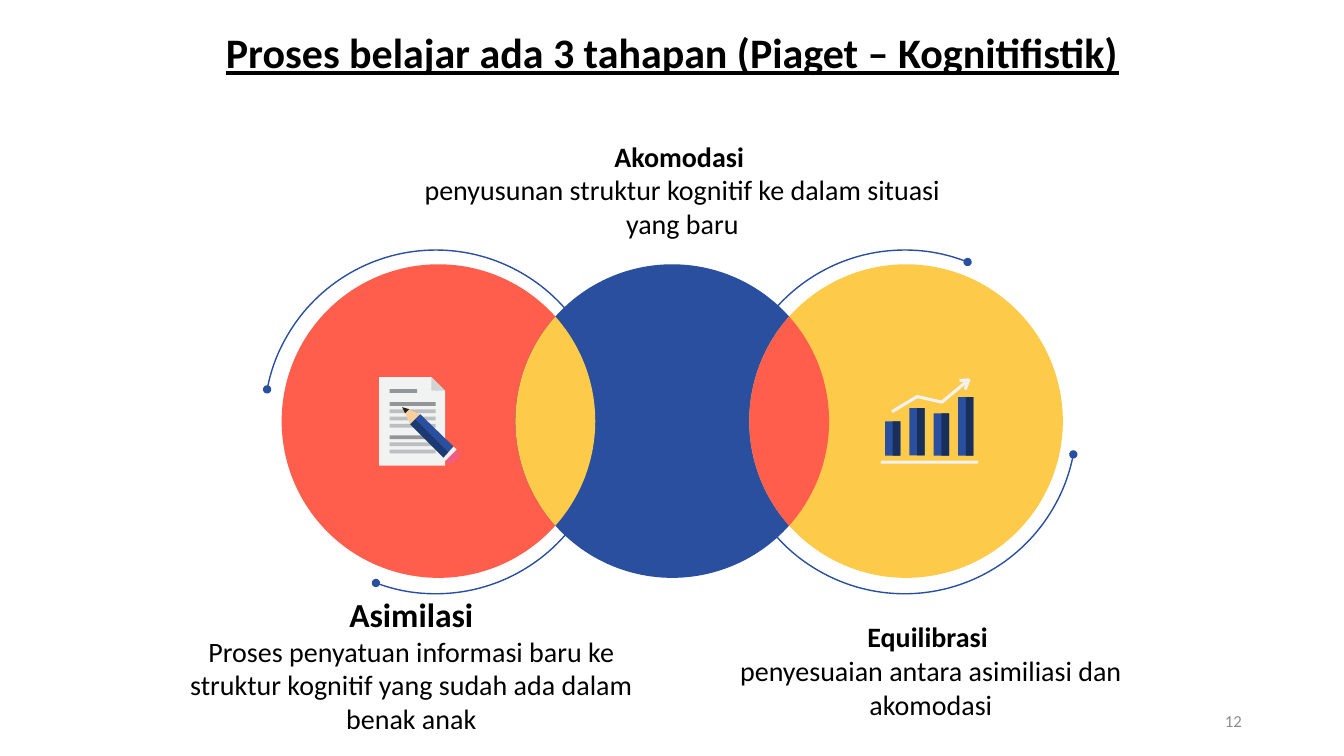
"""Build a slide on Piaget's three stages of learning."""
from math import acos, cos, sin

from pptx import Presentation
from pptx.dml.color import RGBColor
from pptx.enum import shapes, text
from pptx.oxml import parse_xml
from pptx.oxml.ns import nsdecls
from pptx.util import Pt

COLORS = {
    "black": "000000", "gray": "8C8C8C", "red": "FF5E4C", "blue": "294F9E",
    "yellow": "FECA4A", "navy": "182F5C", "paper": "F1F2F2", "fold": "D1D3D4",
    "dark_row": "939697", "light_row": "BCBEC0", "eraser": "F05D82",
    "wood": "F8D09C", "lead": "221F1F",
}
TITLE = "Proses belajar ada 3 tahapan (Piaget – Kognitifistik)"
STAGES = [
    ("Asimilasi", 24, "Proses penyatuan informasi baru ke struktur kognitif yang sudah ada dalam benak anak",
     (125.3, 424.1, 337, 101.5)),
    ("Equilibrasi ", 20, "penyesuaian antara asimiliasi dan akomodasi", (514.8, 442.8, 300.2, 72.7)),
    ("Akomodasi ", 20, "penyusunan struktur kognitif ke dalam situasi yang baru", (298.1, 99.4, 378.7, 72.7)),
]
CIRCLES = ["red", "blue", "yellow"]
LENSES = ["yellow", "red"]
FIRST_X, CENTER_Y, RADIUS, SPACING = 313.2, 300.8, 112, 167
ARC_TOP, ARC_SIZE = 178.6, 245.5
ARCS = [
    (188.6, 190.9, 0, ["headEnd"]),
    (523.4, 190.9, 291.5, ["headEnd", "tailEnd"]),
    (188.6, 10.9, 110.4, ["headEnd", "tailEnd"]),
    (523.4, 10.9, 142, ["headEnd", "tailEnd"]),
]
BAR_HEIGHTS = [24.4, 33.8, 30.2, 41.7]
BAR_LEFT, BAR_STEP, BAR_WIDTH, BAR_BOTTOM = 632.2, 17.4, 11, 325.4
TREND_LINES = [
    [(637.2, 294.1), (655.2, 283.3), (672.8, 287.3), (690.1, 272.9)],
    [(685.4, 271.8), (692, 271.4), (689.4, 278.3)],
]
PAGE = [
    ("paper", [(270.9, 269.3), (308.2, 269.3), (318, 279.1), (318, 332.6), (270.9, 332.6)]),
    ("fold", [(308.2, 269.3), (318, 279.1), (308.2, 279.1)]),
]
PAGE_ROWS = [
    (277.9, 19.6, "dark_row"), (287.3, 33, "dark_row"), (292.4, 33, "light_row"),
    (297.6, 33, "light_row"), (302.8, 33, "light_row"), (311, 33, "dark_row"),
    (316, 33, "light_row"), (321.2, 33, "light_row"),
]
PENCIL = [
    ("eraser", [(316.1, 326.2), (322.6, 319), (324, 319), (329, 325), (322.6, 331.2), (321.1, 331.2)]),
    ("wood", [(300.2, 295.9), (287.3, 290.9), (293, 303.1)]),
    ("lead", [(292.3, 292.3), (287.3, 290.9), (289.4, 295.2)]),
    ("blue", [(293, 303.1), (300.2, 295.9), (324, 319), (316.8, 326.9)]),
    ("paper", [(316.8, 326.9), (324, 319), (326.2, 321.1), (318.2, 329)]),
]
PENCIL_SHADE = [(293, 303.1), (296.6, 299.5), (320.4, 323.3), (316.8, 326.9)]


def rgb(name):
    return RGBColor.from_string(COLORS[name])


def paint(shape, fill=None, line=None, width=1):
    shape.shadow.inherit = False
    if fill:
        shape.fill.solid()
        shape.fill.fore_color.rgb = rgb(fill)
    else:
        shape.fill.background()
    if line:
        shape.line.color.rgb = rgb(line)
        shape.line.width = Pt(width)
    else:
        shape.line.fill.background()
    return shape


def preset(slide, kind, box, **style):
    return paint(slide.shapes.add_shape(kind, *map(Pt, box)), **style)


def outline(slide, points, closed=True, **style):
    corners = [(Pt(x), Pt(y)) for x, y in points]
    builder = slide.shapes.build_freeform(*corners[0])
    builder.add_line_segments(corners[1:], close=closed)
    return paint(builder.convert_to_shape(), **style)


def write(paragraph, content, size=20, bold=False, underline=False, color="black",
          align=text.PP_ALIGN.CENTER):
    paragraph.alignment = align
    run = paragraph.add_run()
    run.text = content
    run.font.name = "Calibri"
    run.font.size = Pt(size)
    run.font.bold = bold
    run.font.underline = underline
    run.font.color.rgb = rgb(color)


def text_frame(slide, box, margin=0):
    frame = slide.shapes.add_textbox(*map(Pt, box)).text_frame
    frame.word_wrap = True
    frame.margin_left = frame.margin_right = Pt(margin)
    frame.margin_top = frame.margin_bottom = Pt(margin / 2)
    return frame


def add_title(slide):
    title = slide.shapes.title
    title.left, title.top, title.width, title.height = map(Pt, (66.2, 2.9, 828, 72.7))
    title.text_frame.vertical_anchor = text.MSO_ANCHOR.MIDDLE
    paragraph = title.text_frame.paragraphs[0]
    paragraph.line_spacing = 0.9
    write(paragraph, TITLE, size=30, bold=True, underline=True)


def add_arcs(slide):
    for left, start, end, dots in ARCS:
        arc = preset(slide, shapes.MSO_SHAPE.ARC, (left, ARC_TOP, ARC_SIZE, ARC_SIZE), line="blue")
        arc.adjustments[0], arc.adjustments[1] = start * 0.6, end * 0.6
        for dot in dots:
            arc.line._get_or_add_ln().append(parse_xml(f'<a:{dot} {nsdecls("a")} type="oval"/>'))


def add_circles(slide):
    for index, color in enumerate(CIRCLES):
        left = FIRST_X + index * SPACING - RADIUS
        preset(slide, shapes.MSO_SHAPE.OVAL, (left, CENTER_Y - RADIUS, 2 * RADIUS, 2 * RADIUS), fill=color)
    half_angle = acos(SPACING / 2 / RADIUS)
    angles = [half_angle * step / 30 for step in range(-30, 31)]
    for index, color in enumerate(LENSES):
        center = FIRST_X + index * SPACING
        right_edge = [(center + RADIUS * cos(a), CENTER_Y + RADIUS * sin(a)) for a in angles]
        left_edge = [(center + SPACING - RADIUS * cos(a), CENTER_Y - RADIUS * sin(a)) for a in angles]
        outline(slide, right_edge + left_edge, fill=color)


def add_stages(slide):
    for heading, size, description, box in STAGES:
        frame = text_frame(slide, box)
        write(frame.paragraphs[0], heading, size=size, bold=True)
        write(frame.add_paragraph(), description)


def add_chart_icon(slide):
    rectangle = shapes.MSO_SHAPE.RECTANGLE
    preset(slide, rectangle, (629.3, 329, 69.5, 2.2), fill="paper")
    for index, height in enumerate(BAR_HEIGHTS):
        left, top = BAR_LEFT + index * BAR_STEP, BAR_BOTTOM - height
        preset(slide, rectangle, (left, top, BAR_WIDTH, height), fill="blue")
        preset(slide, rectangle, (left + BAR_WIDTH / 2, top, BAR_WIDTH / 2, height), fill="navy")
    for points in TREND_LINES:
        outline(slide, points, closed=False, line="paper", width=2.2)


def add_page_icon(slide):
    for color, points in PAGE:
        outline(slide, points, fill=color)
    for top, width, color in PAGE_ROWS:
        preset(slide, shapes.MSO_SHAPE.RECTANGLE, (278.3, top, width, 2.7), fill=color)
    for color, points in PENCIL:
        outline(slide, points, fill=color)
    shade = outline(slide, PENCIL_SHADE, fill="black")
    color_element = shade.fill._xPr.find(".//{*}srgbClr")
    color_element.append(parse_xml(f'<a:alpha {nsdecls("a")} val="28000"/>'))


def main():
    presentation = Presentation()
    presentation.slide_width, presentation.slide_height = Pt(960), Pt(540)
    slide = presentation.slides.add_slide(presentation.slide_layouts[5])
    add_arcs(slide)
    add_title(slide)
    add_circles(slide)
    add_stages(slide)
    add_chart_icon(slide)
    add_page_icon(slide)
    number = text_frame(slide, (678.2, 500.4, 216, 28.8), margin=7.2)
    number.vertical_anchor = text.MSO_ANCHOR.MIDDLE
    write(number.paragraphs[0], "12", size=12, color="gray", align=text.PP_ALIGN.RIGHT)
    presentation.save("out.pptx")


if __name__ == "__main__":
    main()
